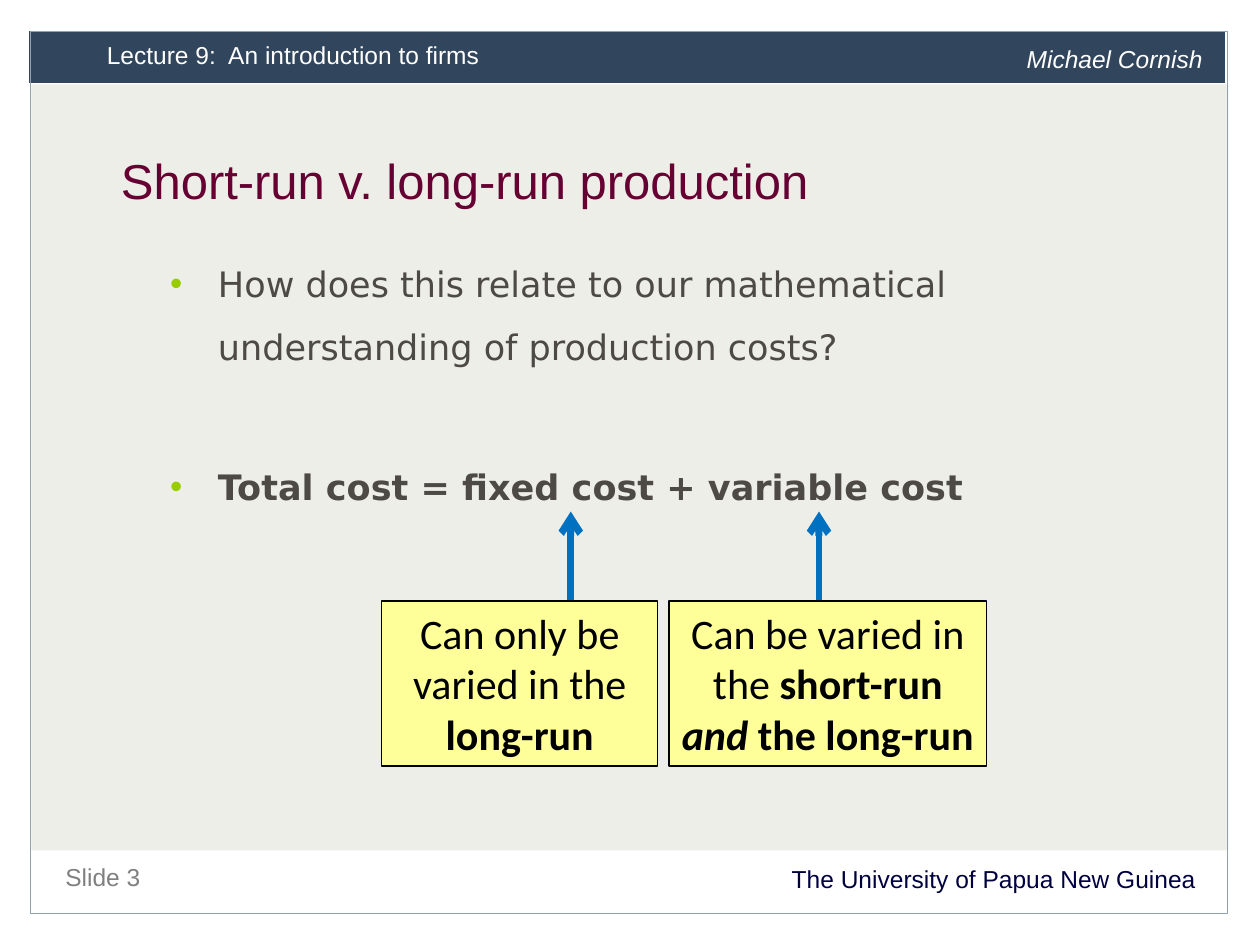
"""Builds a lecture slide on short-run and long-run production costs."""
from lxml.etree import SubElement
from pptx import Presentation
from pptx.dml.color import RGBColor
from pptx.enum.shapes import MSO_CONNECTOR, MSO_SHAPE
from pptx.enum.text import MSO_ANCHOR, MSO_AUTO_SIZE, PP_ALIGN
from pptx.oxml.ns import qn
from pptx.util import Inches, Pt

WHITE = RGBColor(0xFF, 0xFF, 0xFF)
BLACK = RGBColor(0x00, 0x00, 0x00)
PANEL = RGBColor(0xED, 0xEE, 0xE8)
NAVY = RGBColor(0x31, 0x46, 0x5C)
FRAME = RGBColor(0x91, 0xA1, 0xB0)
INK = RGBColor(0x00, 0x00, 0x41)
GREY = RGBColor(0x80, 0x80, 0x80)
PLUM = RGBColor(0x66, 0x00, 0x33)
BODY = RGBColor(0x4D, 0x4A, 0x46)
LIME = "99CC00"
BLUE = RGBColor(0x00, 0x70, 0xC0)
YELLOW = RGBColor(0xFF, 0xFF, 0x99)

TITLE = "Short-run v. long-run production"
BULLETS = [
    ("How does this relate to our mathematical understanding of production costs?", False, 0),
    ("Total cost = fixed cost + variable cost", True, 44),
]
PANELS = [
    ((0.25, 0.67, 9.5, 6.08), PANEL, None, 0),
    ((0.23, 0.24, 9.5, 0.42), NAVY, WHITE, 0.5),
    ((0.24, 0.25, 9.5, 7), None, FRAME, 0.75),
]
LABELS = [
    ("The University of Papua New Guinea", (0.42, 6.83, 9.17, 0.32), 15, INK, PP_ALIGN.RIGHT, False),
    ("Slide 3", (0.42, 6.75, 4.33, 0.34), 20, GREY, PP_ALIGN.LEFT, False),
    ("Lecture 9:  An introduction to firms", (0.75, 0.25, 6.13, 0.37), 18, WHITE, PP_ALIGN.LEFT, False),
    ("Michael Cornish", (8.05, 0.28, 1.64, 0.37), 18, WHITE, PP_ALIGN.LEFT, True),
]
CALLOUT_TOP, CALLOUT_HEIGHT, ARROW_TIP = 4.77, 1.31, 4.06
CALLOUTS = [
    (3.03, 2.19, 4.53, [("Can only be varied in the ", False, False), ("long-run", True, False)]),
    (5.31, 2.52, 6.5, [("Can be varied in the ", False, False), ("short-run ", True, False),
                       ("and", True, True), (" the long-run", True, False)]),
]


def set_font(font, name, size, color):
    font.name, font.size = name, Pt(size)
    font.color.rgb = color


def add_rect(slide, box, fill, line, width):
    rect = slide.shapes.add_shape(MSO_SHAPE.RECTANGLE, *map(Inches, box))
    rect.shadow.inherit = False
    if fill is None:
        rect.fill.background()
    else:
        rect.fill.solid()
        rect.fill.fore_color.rgb = fill
    if line is None:
        rect.line.fill.background()
    else:
        rect.line.color.rgb = line
        rect.line.width = Pt(width)
    return rect


def add_label(slide, text, box, spacing, color, align, italic):
    label = slide.shapes.add_textbox(*map(Inches, box))
    label.text_frame.word_wrap = True
    paragraph = label.text_frame.paragraphs[0]
    paragraph.text = text
    paragraph.alignment = align
    paragraph.line_spacing = Pt(spacing)
    set_font(paragraph.font, "Arial", 14, color)
    paragraph.font.italic = italic


def place(placeholder, box):
    placeholder.left, placeholder.top, placeholder.width, placeholder.height = map(Inches, box)
    frame = placeholder.text_frame
    frame.auto_size = MSO_AUTO_SIZE.NONE
    frame.vertical_anchor = MSO_ANCHOR.TOP
    return frame


def fill_title(slide):
    paragraph = place(slide.shapes.title, (0.86, 1.25, 8.13, 0.75)).paragraphs[0]
    paragraph.text = TITLE
    paragraph.alignment = PP_ALIGN.LEFT
    paragraph.line_spacing = Pt(26)
    set_font(paragraph.font, "Arial", 28, PLUM)


def fill_bullets(slide):
    frame = place(slide.placeholders[1], (1.25, 1.87, 7.61, 3.57))
    for index, (text, bold, before) in enumerate(BULLETS):
        paragraph = frame.add_paragraph() if index else frame.paragraphs[0]
        paragraph.text = text
        paragraph.line_spacing = 1.5
        paragraph.space_before = Pt(before)
        properties = paragraph._p.get_or_add_pPr()
        properties.set("marL", str(Inches(0.38)))
        properties.set("indent", str(-Inches(0.38)))
        SubElement(SubElement(properties, qn("a:buClr")), qn("a:srgbClr"), val=LIME)
        SubElement(properties, qn("a:buFont"), typeface="Arial")
        SubElement(properties, qn("a:buChar"), char="•")
        set_font(paragraph.font, "DejaVu Sans", 20, BODY)
        paragraph.font.bold = bold


def add_arrow(slide, x):
    arrow = slide.shapes.add_connector(
        MSO_CONNECTOR.STRAIGHT, Inches(x), Inches(CALLOUT_TOP), Inches(x), Inches(ARROW_TIP))
    arrow.line.color.rgb = BLUE
    arrow.line.width = Pt(4)
    SubElement(arrow.line._get_or_add_ln(), qn("a:tailEnd"), type="arrow")
    SubElement(arrow._element.spPr, qn("a:effectLst"))


def add_callout(slide, left, width, runs):
    box = (left, CALLOUT_TOP, width, CALLOUT_HEIGHT)
    frame = add_rect(slide, box, YELLOW, BLACK, 0.75).text_frame
    frame.word_wrap = True
    frame.vertical_anchor = MSO_ANCHOR.TOP
    paragraph = frame.paragraphs[0]
    paragraph.alignment = PP_ALIGN.CENTER
    set_font(paragraph.font, "Calibri", 24, BLACK)
    for text, bold, italic in runs:
        run = paragraph.add_run()
        run.text = text
        run.font.bold, run.font.italic = bold, italic


def main():
    deck = Presentation()
    deck.slide_width, deck.slide_height = Inches(10), Inches(7.5)
    slide = deck.slides.add_slide(deck.slide_layouts[1])
    title, body = slide.shapes.title, slide.placeholders[1]
    for panel in PANELS:
        add_rect(slide, *panel)
    for label in LABELS:
        add_label(slide, *label)
    fill_title(slide)
    fill_bullets(slide)
    for placeholder in (title, body):
        slide.shapes._spTree.append(placeholder._element)
    for left, width, arrow_x, runs in CALLOUTS:
        add_arrow(slide, arrow_x)
        add_callout(slide, left, width, runs)
    deck.save("out.pptx")


if __name__ == "__main__":
    main()
